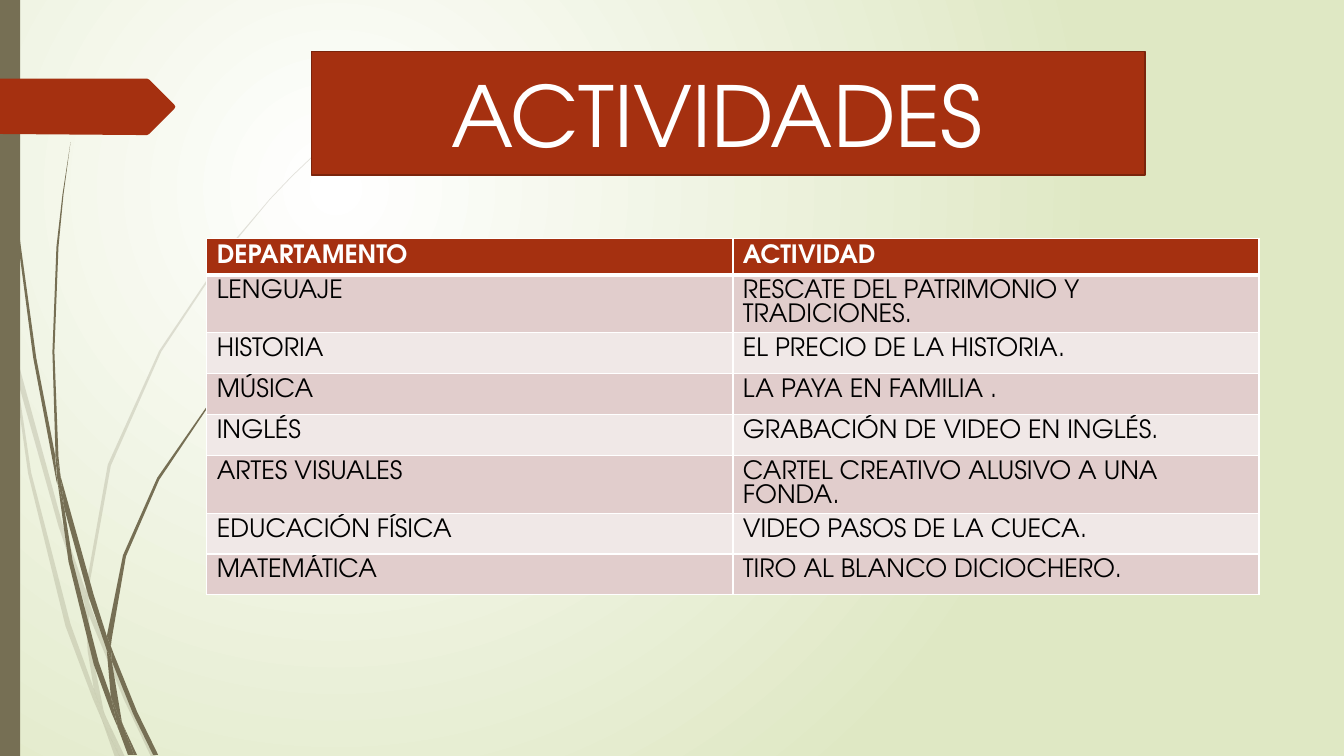
from lxml import etree
from pptx import Presentation
from pptx.dml.color import RGBColor
from pptx.enum.shapes import MSO_SHAPE
from pptx.enum.text import MSO_ANCHOR, MSO_AUTO_SIZE, PP_ALIGN
from pptx.oxml import parse_xml
from pptx.oxml.ns import nsdecls, qn
from pptx.util import Cm, Pt

RED, DARK_RED, OLIVE, WHITE, BLACK = "A53010", "7A240C", "766F54", "FFFFFF", "000000"
BACKGROUND_EDGE = "DFE8C4"
BANDS = ("E1CDCC", "F0E8E7")
FONT = "TeX Gyre Adventor"
GRID = Cm(0.0254)  # unit of the outlines below

# Grass blades: outline points on the grid, pale ones behind
PALE_BLADES = [
    [(11, 350), (9, 322), (0, 282), (0, 299), (10, 344)],
    [(58, 522), (84, 599), (85, 586), (62, 520), (14, 345), (17, 376)],
    [(92, 607), (88, 596), (88, 610), (123, 694), (150, 751), (155, 751), (127, 692)],
    [(119, 751), (124, 751), (105, 711)],
    [(93, 683), (70, 619), (31, 469), (17, 376), (11, 350), (28, 470), (65, 621),
     (92, 693), (101, 714), (99, 707)],
    [(84, 599), (87, 646), (93, 683), (96, 692), (105, 711), (103, 706), (91, 646),
     (88, 610), (88, 608)],
    [(88, 584), (110, 462), (160, 349), (229, 245), (268, 198), (290, 175), (312, 154),
     (312, 153), (289, 175), (268, 197), (228, 244), (158, 348), (107, 461), (85, 584),
     (85, 586), (88, 596)],
    [(101, 714), (114, 751), (119, 751)],
    [(88, 608), (88, 610), (88, 596), (85, 586), (84, 599)],
    [(96, 692), (93, 683), (99, 707), (101, 714), (119, 751), (105, 711)],
]
DARK_BLADES = [
    [(7, 110), (17, 233), (33, 355), (56, 477), (57, 481), (55, 457), (55, 453),
     (36, 355), (19, 232), (8, 109), (5, 48), (4, 0), (3, 0), (4, 48)],
    [(88, 592), (106, 645), (106, 633), (106, 631), (93, 590), (60, 472), (64, 505)],
    [(113, 649), (110, 641), (111, 656), (132, 708), (152, 749), (157, 749), (136, 706)],
    [(110, 691), (98, 657), (72, 556), (64, 505), (57, 477), (68, 557), (93, 659),
     (111, 708), (117, 722), (116, 717)],
    [(60, 472), (58, 453), (54, 349), (58, 245), (63, 193), (70, 141), (62, 193),
     (56, 245), (52, 349), (55, 449)],
    [(133, 749), (136, 749), (122, 719)],
    [(57, 477), (64, 505), (60, 472), (55, 449), (55, 453)],
    [(111, 633), (125, 552), (158, 476), (205, 406), (231, 374), (245, 359), (261, 344),
     (260, 344), (245, 358), (231, 373), (204, 405), (156, 474), (122, 551), (106, 631),
     (110, 641)],
    [(117, 722), (127, 749), (131, 749)],
    [(106, 645), (110, 691), (116, 706), (122, 719), (121, 716), (111, 656), (109, 651)],
    [(106, 645), (109, 651), (111, 656), (110, 641), (106, 631), (106, 633)],
    [(116, 706), (110, 691), (116, 717), (117, 722), (130, 749), (133, 749), (122, 719)],
]
ARROW_TAG = [(0, 78), (146, 78), (148, 79), (173, 104), (174, 106), (173, 108),
             (148, 133), (146, 134), (136, 134), (0, 133)]

ACTIVITIES = [
    ("DEPARTAMENTO", "ACTIVIDAD"),
    ("LENGUAJE", "RESCATE DEL PATRIMONIO Y TRADICIONES."),
    ("HISTORIA", "EL PRECIO DE LA HISTORIA."),
    ("MÚSICA", "LA PAYA EN FAMILIA ."),
    ("INGLÉS", "GRABACIÓN DE VIDEO EN INGLÉS."),
    ("ARTES VISUALES", "CARTEL CREATIVO ALUSIVO A UNA FONDA."),
    ("EDUCACIÓN FÍSICA", "VIDEO PASOS DE LA CUECA."),
    ("MATEMÁTICA", "TIRO AL BLANCO DICIOCHERO."),
]


def color(value):
    return RGBColor.from_string(value)


class SlideBuilder:
    def __init__(self, slide, font_name):
        self.slide = slide
        self.font_name = font_name

    def background(self, center, edge):
        fill = self.slide.background.fill
        fill.solid()
        properties = self.slide.element.find(".//" + qn("p:bgPr"))
        properties.replace(properties.find(qn("a:solidFill")), parse_xml(
            f'<a:gradFill {nsdecls("a")} rotWithShape="1"><a:gsLst>'
            f'<a:gs pos="0"><a:srgbClr val="{center}"/></a:gs>'
            f'<a:gs pos="100000"><a:srgbClr val="{edge}"/></a:gs></a:gsLst>'
            '<a:path path="circle"><a:fillToRect l="50000" t="50000" r="100000" b="100000"/>'
            '</a:path></a:gradFill>'))

    def paint(self, shape, fill, opacity=100):
        shape.shadow.inherit = False
        shape.fill.solid()
        shape.fill.fore_color.rgb = color(fill)
        shape.line.fill.background()
        if opacity < 100:
            fill_color = shape.element.spPr.find(".//" + qn("a:srgbClr"))
            etree.SubElement(fill_color, qn("a:alpha")).set("val", str(opacity * 1000))

    def outline(self, points, fill, opacity=100):
        builder = self.slide.shapes.build_freeform(*points[0], scale=GRID)
        builder.add_line_segments(points[1:], close=True)
        self.paint(builder.convert_to_shape(), fill, opacity)

    def rectangle(self, left, top, width, height, fill):
        shape = self.slide.shapes.add_shape(
            MSO_SHAPE.RECTANGLE, Cm(left), Cm(top), Cm(width), Cm(height))
        self.paint(shape, fill)

    def set_text(self, paragraph, text, size, text_color, bold=False):
        paragraph.text = text
        font = paragraph.font
        font.name, font.size, font.bold = self.font_name, Pt(size), bold
        font.color.rgb = color(text_color)

    def title(self, text, left, top, width, height):
        title = self.slide.shapes.title
        title.left, title.top, title.width, title.height = map(Cm, (left, top, width, height))
        title.element.spPr.find(qn("a:xfrm")).addnext(parse_xml(
            f'<a:prstGeom {nsdecls("a")} prst="roundRect"><a:avLst/></a:prstGeom>'))
        self.paint(title, RED)
        title.line.color.rgb = color(DARK_RED)
        title.line.width = Pt(1.25)
        frame = title.text_frame
        frame.auto_size = MSO_AUTO_SIZE.NONE
        frame.word_wrap = True
        frame.vertical_anchor = MSO_ANCHOR.MIDDLE
        paragraph = frame.paragraphs[0]
        paragraph.alignment = PP_ALIGN.CENTER
        self.set_text(paragraph, text, 60, WHITE)
        title.element.getparent().append(title.element)  # bring to front

    def borders(self, cell, top, bottom):
        properties = cell._tc.get_or_add_tcPr()
        for index, (side, width) in enumerate(
                [("L", 1), ("R", 1), ("T", top), ("B", bottom)]):
            properties.insert(index, parse_xml(
                f'<a:ln{side} {nsdecls("a")} w="{Pt(width)}"><a:solidFill>'
                f'<a:srgbClr val="{WHITE}"/></a:solidFill></a:ln{side}>'))

    def table(self, rows, left, top, column_width, header_height, row_height):
        columns = len(rows[0])
        table = self.slide.shapes.add_table(
            len(rows), columns, Cm(left), Cm(top), Cm(column_width * columns),
            Cm(header_height + row_height * (len(rows) - 1))).table
        for column in table.columns:
            column.width = Cm(column_width)
        for index, texts in enumerate(rows):
            header = index == 0
            table.rows[index].height = Cm(header_height if header else row_height)
            for cell, text in zip(table.rows[index].cells, texts):
                cell.fill.solid()
                cell.fill.fore_color.rgb = color(RED if header else BANDS[(index - 1) % 2])
                self.borders(cell, 3 if index == 1 else 1, 3 if header else 1)
                paragraph = cell.text_frame.paragraphs[0]
                paragraph.line_spacing = Pt(17)
                self.set_text(paragraph, text, 18, WHITE if header else BLACK, header)


def main():
    presentation = Presentation()
    presentation.slide_width, presentation.slide_height = Cm(33.87), Cm(19.05)
    slide = presentation.slides.add_slide(presentation.slide_layouts[5])
    builder = SlideBuilder(slide, FONT)

    # Background and side decoration
    builder.background(WHITE, BACKGROUND_EDGE)
    for blades, opacity in ((PALE_BLADES, 20), (DARK_BLADES, 100)):
        for blade in blades:
            builder.outline(blade, OLIVE, opacity)
    builder.rectangle(0, 0, 0.51, 19.05, OLIVE)
    builder.outline(ARROW_TAG, RED)

    # Activities by department
    builder.table(ACTIVITIES, 5.21, 6.02, 13.26, 0.91, 1.03)
    builder.title("ACTIVIDADES ", 7.85, 1.3, 21.01, 3.12)

    presentation.save("out.pptx")


if __name__ == "__main__":
    main()
